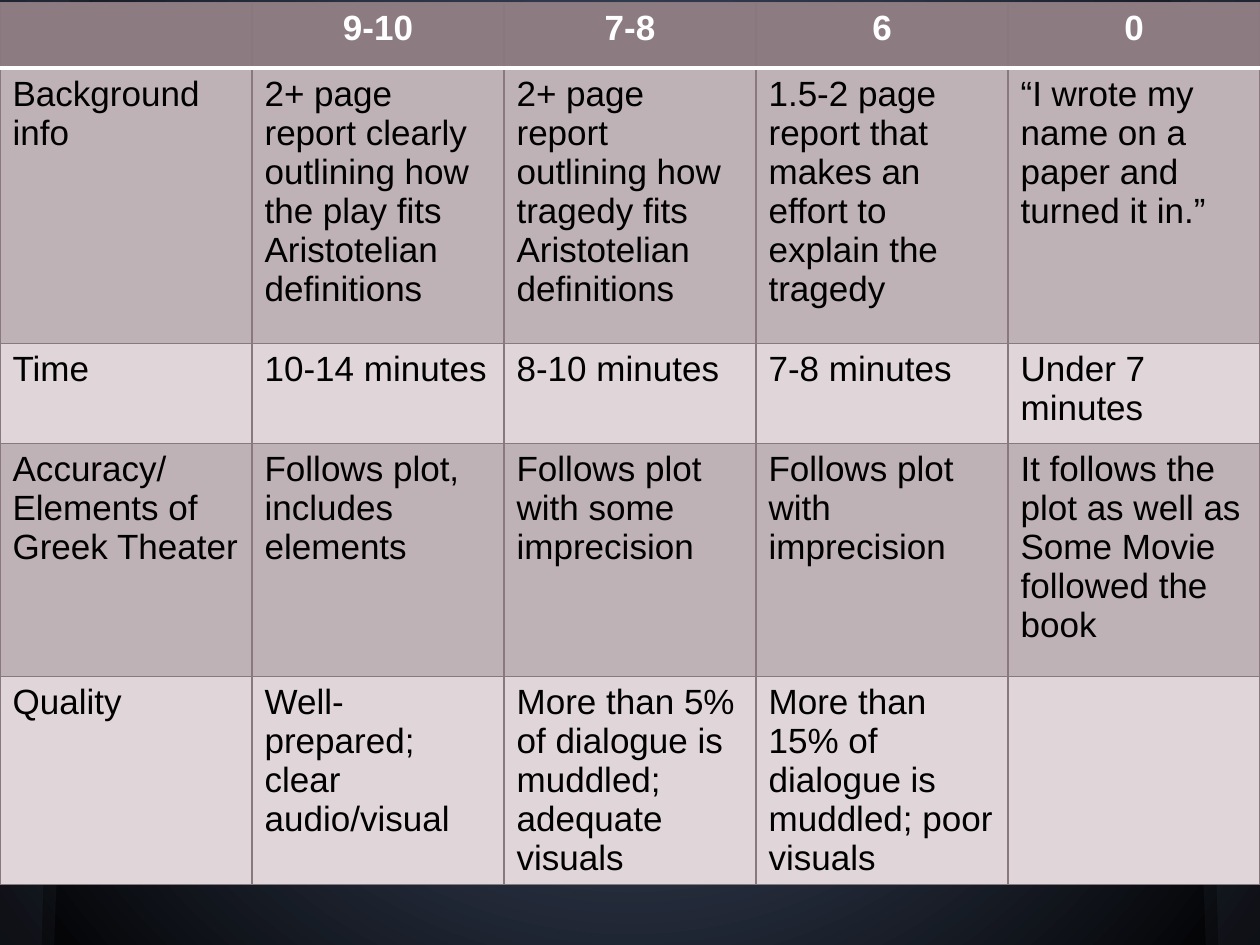
from dataclasses import dataclass

from pptx import Presentation
from pptx.dml.color import RGBColor
from pptx.enum.shapes import MSO_SHAPE
from pptx.enum.text import PP_ALIGN
from pptx.oxml import parse_xml
from pptx.oxml.ns import nsdecls, qn
from pptx.util import Inches, Pt


@dataclass(frozen=True)
class Theme:
    font: str = "Arial"
    size: int = 20
    navy: str = "5C6E95"
    slate: str = "5A6378"
    black: str = "000000"
    white: str = "FFFFFF"
    head: str = "8C7C82"
    dark: str = "BEB2B6"
    light: str = "E0D6DA"
    rule: str = "89797F"
    thin: float = 0.75
    thick: float = 2


WIDTH, HEIGHT = 10, 7.5
ROWS = [0.52, 2.19, 0.79, 1.85, 1.65]
RUBRIC = [
    ["", "9-10", "7-8", "6", "0"],
    ["Background info",
     "2+ page report clearly outlining how the play fits Aristotelian definitions",
     "2+ page report outlining how tragedy fits Aristotelian definitions",
     "1.5-2 page report that makes an effort to explain the tragedy",
     "“I wrote my name on a paper and turned it in.”"],
    ["Time", "10-14 minutes", "8-10 minutes", "7-8 minutes", "Under 7 minutes"],
    ["Accuracy/Elements of Greek Theater",
     "Follows plot, includes elements",
     "Follows plot with some imprecision",
     "Follows plot with imprecision",
     "It follows the plot as well as Some Movie followed the book"],
    ["Quality",
     "Well-prepared; clear audio/visual",
     "More than 5% of dialogue is muddled; adequate visuals",
     "More than 15% of dialogue is muddled; poor visuals",
     ""],
]


def write(frame, text, *, font, size, color, bold=False, align=PP_ALIGN.LEFT):
    """Put one formatted paragraph in a text frame."""
    para = frame.paragraphs[0]
    para.alignment = align
    para.font.size = Pt(size)
    if text:
        run = para.add_run()
        run.text = text
        run.font.name = font
        run.font.size = Pt(size)
        run.font.bold = bold
        run.font.color.rgb = RGBColor.from_string(color)


class Deck:
    """Hold the theme and the current slide, and draw on it."""

    def __init__(self, theme):
        """Open a blank slide."""
        self.theme = theme
        self.prs = Presentation()
        self.prs.slide_width = Inches(WIDTH)
        self.prs.slide_height = Inches(HEIGHT)
        self.slide = self.prs.slides.add_slide(self.prs.slide_layouts[6])

    def glow(self, inner, outer):
        """Fill the background with a round gradient."""
        fill = self.slide.background.fill
        fill.gradient()
        for stop, color, place in zip(fill.gradient_stops, (inner, outer), (0, 1)):
            stop.color.rgb = RGBColor.from_string(color)
            stop.position = place
        grad = self.slide.element.find(".//" + qn("a:gradFill"))
        grad.replace(grad.find(qn("a:lin")), parse_xml(
            f'<a:path {nsdecls("a")} path="circle">'
            '<a:fillToRect l="50000" t="50000" r="50000" b="50000"/></a:path>'))

    def tint(self, shape, color, alpha):
        """Give a shape a see-through fill and no line."""
        shape.shadow.inherit = False
        shape.line.fill.background()
        shape.fill.solid()
        shape.fill.fore_color.rgb = RGBColor.from_string(color)
        tone = shape.element.spPr.find(qn("a:solidFill"))[0]
        tone.append(parse_xml(f'<a:alpha {nsdecls("a")} val="{alpha * 1000}"/>'))

    def band(self, top, height, color, alpha):
        """Draw a band across the slide."""
        shape = self.slide.shapes.add_shape(
            MSO_SHAPE.RECTANGLE, 0, Inches(top), Inches(WIDTH), Inches(height))
        self.tint(shape, color, alpha)

    def wedge(self, edge, top, base, color, alpha):
        """Draw a side curtain that narrows towards the bottom."""
        turn = -1 if edge else 1
        spots = [(edge + turn * top, 0), (edge + turn * base, HEIGHT), (edge, HEIGHT)]
        pen = self.slide.shapes.build_freeform(Inches(edge), 0)
        pen.add_line_segments([(Inches(x), Inches(y)) for x, y in spots])
        self.tint(pen.convert_to_shape(), color, alpha)

    def edges(self, cell, **sides):
        """Set the borders of a cell, thin unless a side is named."""
        props = cell._tc.get_or_add_tcPr()
        for side in "LRTB":
            color, width = sides.get(side, (self.theme.rule, self.theme.thin))
            props.append(parse_xml(
                f'<a:ln{side} {nsdecls("a")} w="{Pt(width)}"><a:solidFill>'
                f'<a:srgbClr val="{color}"/></a:solidFill></a:ln{side}>'))

    def table(self, top, rows, data):
        """Draw the rubric with a header row and banded rows."""
        look = self.theme
        grid = self.slide.shapes.add_table(
            len(data), len(data[0]), 0, Inches(top), Inches(WIDTH), Inches(sum(rows))).table
        bold = (look.white, look.thick)
        for r, line in enumerate(data):
            grid.rows[r].height = Inches(rows[r])
            head = r == 0
            fill = look.head if head else (look.light, look.dark)[r % 2]
            sides = {0: {"B": bold}, 1: {"T": bold}}.get(r, {})
            for c, text in enumerate(line):
                cell = grid.cell(r, c)
                self.edges(cell, **sides)
                cell.fill.solid()
                cell.fill.fore_color.rgb = RGBColor.from_string(fill)
                write(cell.text_frame, text, font=look.font, size=look.size,
                      color=look.white if head else look.black, bold=head,
                      align=PP_ALIGN.CENTER if head else PP_ALIGN.LEFT)


def main():
    """Build the rubric slide."""
    look = Theme()
    deck = Deck(look)
    deck.glow(look.navy, look.black)
    deck.band(0, 1.67, look.navy, 20)
    for edge in (0, WIDTH):
        deck.wedge(edge, 0.71, 0.43, look.slate, 10)
        deck.wedge(edge, 0.55, 0.33, look.navy, 10)
    deck.band(6.92, 0.58, look.black, 15)
    deck.table(0.02, ROWS, RUBRIC)
    deck.prs.save("out.pptx")


if __name__ == "__main__":
    main()
